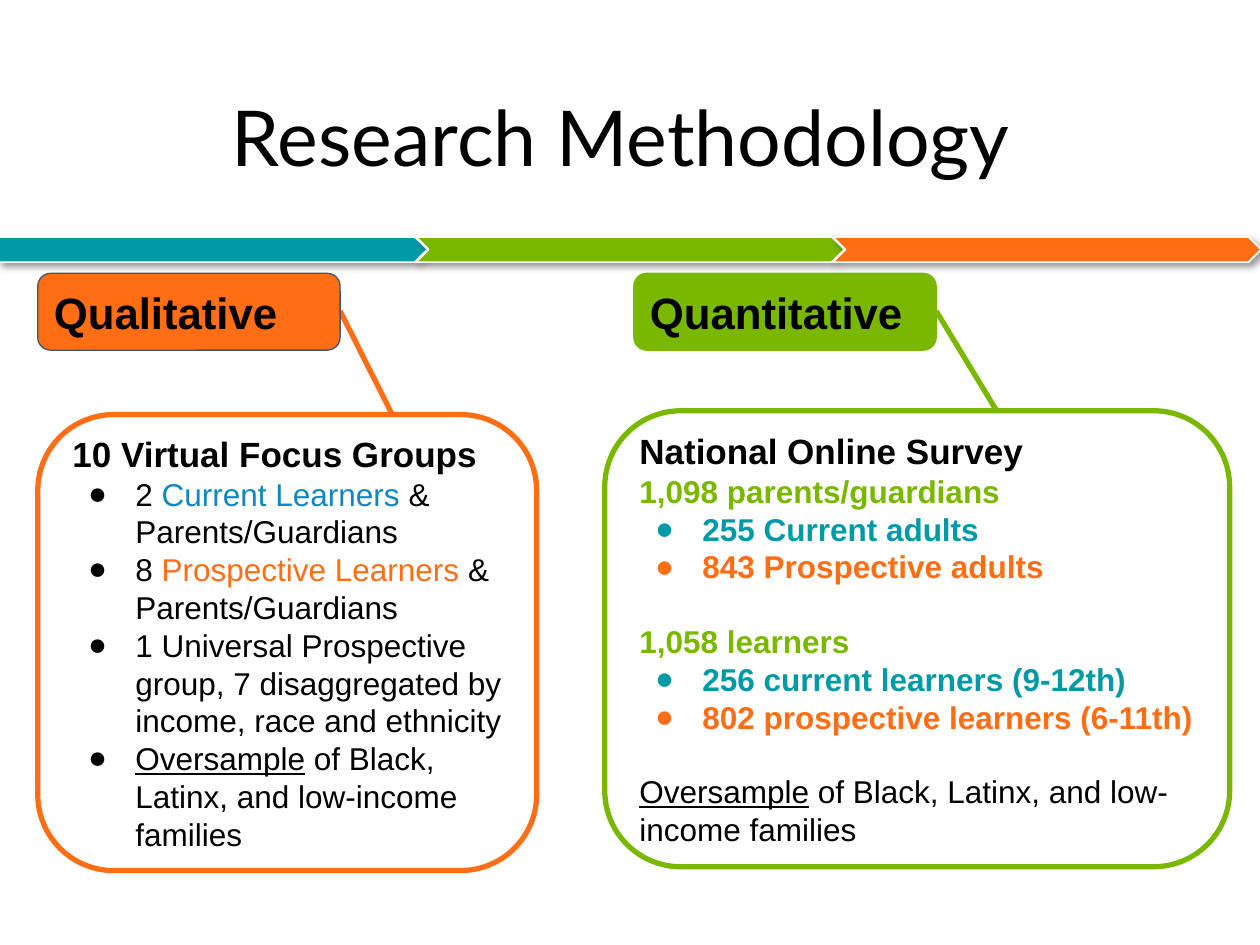
import pptx
import pptx.util
import pptx.dml.color
import pptx.enum.shapes
import pptx.enum.text
import pptx.oxml
import pptx.oxml.ns
from lxml import etree

Pt = pptx.util.Pt
RGB = pptx.dml.color.RGBColor.from_string
SHAPE = pptx.enum.shapes.MSO_SHAPE
ALIGN = pptx.enum.text.PP_ALIGN
qn = pptx.oxml.ns.qn

COLORS = {
    "black": "000000", "white": "FFFFFF", "teal": "009AA6", "green": "7AB800",
    "orange": "FF6D14", "blue": "1186C3", "slate": "44546A",
}


def add_run(paragraph, text, size=18, color="black", bold=False, underline=False, font="Arial"):
    run = paragraph.add_run()
    run.text = text
    run.font.name = font
    run.font.size = Pt(size)
    run.font.bold = bold
    run.font.underline = underline
    run.font.color.rgb = RGB(COLORS[color])


def add_panel(kind, left, top, width, height, fill, line, line_width):
    panel = slide.shapes.add_shape(kind, Pt(left), Pt(top), Pt(width), Pt(height))
    panel.shadow.inherit = False
    panel.fill.solid()
    panel.fill.fore_color.rgb = RGB(COLORS[fill])
    panel.line.color.rgb = RGB(COLORS[line])
    panel.line.width = Pt(line_width)
    frame = panel.text_frame
    frame.word_wrap = True
    frame.vertical_anchor = pptx.enum.text.MSO_ANCHOR.MIDDLE
    frame.margin_left = frame.margin_right = frame.margin_top = frame.margin_bottom = Pt(7.2)
    return panel


presentation = pptx.Presentation()
presentation.slide_width = Pt(720)
presentation.slide_height = Pt(540)
slide = presentation.slides.add_slide(presentation.slide_layouts[6])

for step, (kind, color) in enumerate([
    (SHAPE.PENTAGON, "teal"), (SHAPE.CHEVRON, "green"), (SHAPE.CHEVRON, "orange"),
]):
    band = add_panel(kind, -0.5 + 238.2 * step, 135.4, 244.8, 14.4, color, "white", 1)
    effects = band._element.spPr.find(qn("a:effectLst"))
    shadow = etree.SubElement(effects, qn("a:outerShdw"), blurRad=str(Pt(4)),
                              dist=str(Pt(3)), dir="2700000", rotWithShape="0")
    shade = etree.SubElement(shadow, qn("a:srgbClr"), val=COLORS["black"])
    etree.SubElement(shade, qn("a:alpha"), val="40000")

for x1, y1, x2, y2, color in [
    (194.4, 177.8, 246.2, 280.8, "orange"), (535, 177.8, 569.5, 234.7, "green"),
]:
    link = slide.shapes.add_connector(
        pptx.enum.shapes.MSO_CONNECTOR.STRAIGHT, Pt(x1), Pt(y1), Pt(x2), Pt(y2))
    link.line.color.rgb = RGB(COLORS[color])
    link.line.width = Pt(3)
    etree.SubElement(link._element.spPr, qn("a:effectLst"))

title = slide.shapes.add_textbox(Pt(49.7), Pt(28.8), Pt(620.6), Pt(104.4)).text_frame
title.word_wrap = True
title.vertical_anchor = pptx.enum.text.MSO_ANCHOR.MIDDLE
title.paragraphs[0].alignment = ALIGN.CENTER
title.paragraphs[0].line_spacing = 0.9
add_run(title.paragraphs[0], "Research Methodology ", size=44, font="Lato")

heading = {"size": 20, "bold": True}
total = {"color": "green", "bold": True}
current = {"color": "teal", "bold": True}
prospective = {"color": "orange", "bold": True}
underlined = {"underline": True}
oversample = [("Oversample", underlined), (" of Black, Latinx, and low-income families", {})]

focus_groups = [
    (None, 0, [("10 Virtual Focus Groups", heading)]),
    ("black", 0, [("2 ", {}), ("Current Learners", {"color": "blue"}),
                  (" & Parents/Guardians", {})]),
    ("black", 0, [("8 ", {}), ("Prospective Learners", {"color": "orange"}),
                  (" & Parents/Guardians", {})]),
    ("black", 0, [("1 Universal Prospective group, 7 disaggregated by income, "
                   "race and ethnicity", {})]),
    ("black", 0, oversample),
]
survey = [
    (None, 0, [("National Online Survey", heading)]),
    (None, 0, [("1,098 parents/guardians", total)]),
    ("teal", 0, [("255 Current adults", current)]),
    ("orange", 0, [("843 Prospective adults", prospective)]),
    (None, 21, [("1,058 learners", total)]),
    ("teal", 0, [("256 current learners (9-12th)", current)]),
    ("orange", 0, [("802 prospective learners (6-11th)", prospective)]),
    (None, 21, oversample),
]

for left, top, width, color, content in [
    (21.6, 236.9, 285.1, "orange", focus_groups), (345.6, 234.7, 357.1, "green", survey),
]:
    body = add_panel(SHAPE.ROUNDED_RECTANGLE, left, top, width, 260.6, "white", color, 3).text_frame
    for index, (bullet, gap, runs) in enumerate(content):
        paragraph = body.add_paragraph() if index else body.paragraphs[0]
        paragraph.alignment = ALIGN.LEFT
        if gap:
            paragraph.space_before = Pt(gap)
        if bullet:
            properties = paragraph._p.get_or_add_pPr()
            properties.set("marL", str(Pt(36)))
            properties.set("indent", str(Pt(-27)))
            bullet_color = etree.SubElement(properties, qn("a:buClr"))
            etree.SubElement(bullet_color, qn("a:srgbClr"), val=COLORS[bullet])
            etree.SubElement(properties, qn("a:buFont"), typeface="Arial")
            etree.SubElement(properties, qn("a:buChar"), char="●")
        for text, style in runs:
            add_run(paragraph, text, **style)

for left, label, fill, outline in [
    (21.6, "Qualitative", "orange", "slate"), (362.2, "Quantitative", "green", "green"),
]:
    tag = add_panel(SHAPE.ROUNDED_RECTANGLE, left, 156.2, 172.8, 43.9, fill, outline, 0.75)
    paragraph = tag.text_frame.paragraphs[0]
    paragraph.alignment = ALIGN.LEFT
    add_run(paragraph, label, size=25, bold=True)

presentation.save("out.pptx")
